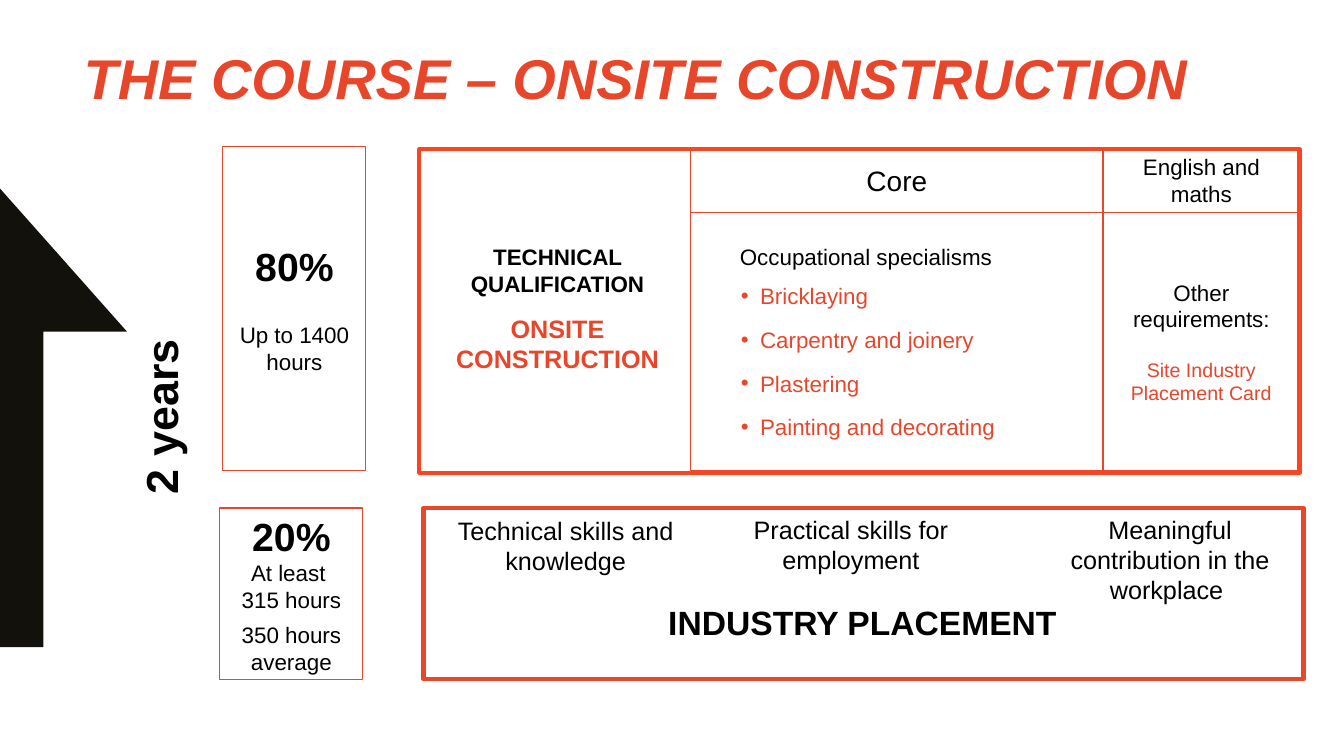
from dataclasses import dataclass

from lxml import etree
from pptx import Presentation
from pptx.dml.color import RGBColor
from pptx.enum.shapes import MSO_SHAPE
from pptx.enum.text import MSO_ANCHOR, MSO_AUTO_SIZE, PP_ALIGN
from pptx.oxml.ns import qn
from pptx.util import Pt

PX = 9144  # EMU per px, 100 px to the inch
FONT = "Arial"
RECT = MSO_SHAPE.RECTANGLE
TOP, MIDDLE = MSO_ANCHOR.TOP, MSO_ANCHOR.MIDDLE
LEFT, CENTER = PP_ALIGN.LEFT, PP_ALIGN.CENTER
NO_AUTOFIT = MSO_AUTO_SIZE.NONE
COLORS = {
    "black": "000000",
    "arrow": "12110C",
    "white": "FFFFFF",
    "accent": "E8462B",
    "line": "E8472B",
    "frame": "FC4421",
}


@dataclass
class Para:
    text: str
    size: int = 16
    color: str = "black"
    bold: bool = False
    italic: bool = False
    align: PP_ALIGN = CENTER
    before: int = 0
    after: int = 0
    margin: int = 0
    indent: int = 0
    bullet: str = ""


@dataclass
class Box:
    left: int
    top: int
    width: int
    height: int
    paras: tuple = ()
    line: str = ""
    line_width: float = 0.75
    fill: str = ""
    anchor: MSO_ANCHOR = MIDDLE
    rotation: int = 0


def rgb(name: str) -> RGBColor:
    return RGBColor.from_string(COLORS[name])


def write_paras(tf, paras: tuple, anchor: MSO_ANCHOR) -> None:
    tf.word_wrap = True
    tf.auto_size = NO_AUTOFIT
    tf.vertical_anchor = anchor
    for i, para in enumerate(paras):
        p = tf.add_paragraph() if i else tf.paragraphs[0]
        p.text = para.text
        p.alignment = para.align
        p.space_before = Pt(para.before)
        p.space_after = Pt(para.after)
        pPr = p._p.get_or_add_pPr()
        if para.margin:
            pPr.set("marL", str(para.margin * PX))
            pPr.set("indent", str(para.indent * PX))
        if para.bullet:
            p.level = 1
            etree.SubElement(pPr, qn("a:buFont"), typeface=FONT)
            etree.SubElement(pPr, qn("a:buChar"), char=para.bullet)
        for r in p.runs:
            r.font.name = FONT
            r.font.size = Pt(para.size)
            r.font.bold = para.bold
            r.font.italic = para.italic
            r.font.color.rgb = rgb(para.color)


def add_box(shapes, box: Box) -> None:
    """Draw a rectangle, or a text box when it has neither line nor fill."""
    place = [v * PX for v in (box.left, box.top, box.width, box.height)]
    if box.line or box.fill:
        sp = shapes.add_shape(RECT, *place)
        sp.shadow.inherit = False
        if box.fill:
            sp.fill.solid()
            sp.fill.fore_color.rgb = rgb(box.fill)
        else:
            sp.fill.background()
        if box.line:
            sp.line.color.rgb = rgb(box.line)
            sp.line.width = Pt(box.line_width)
        else:
            sp.line.fill.background()
    else:
        sp = shapes.add_textbox(*place)
    sp.rotation = box.rotation
    if box.paras:
        write_paras(sp.text_frame, box.paras, box.anchor)


def add_years_arrow(shapes) -> None:
    fb = shapes.build_freeform(0, 187, scale=PX)
    fb.add_line_segments([(126, 329), (43, 329), (43, 642), (0, 642)])
    sp = fb.convert_to_shape()
    sp.shadow.inherit = False
    sp.fill.solid()
    sp.fill.fore_color.rgb = rgb("arrow")
    sp.line.fill.background()


def specialism(text: str) -> Para:
    return Para(text, color="accent", align=LEFT, before=6, after=6,
                margin=59, indent=-19, bullet="•")


def skill(left: int, top: int, width: int, height: int, text: str) -> Box:
    return Box(left, top, width, height, (Para(text, 18),), anchor=TOP)


SPECIALISMS = ("Bricklaying", "Carpentry and joinery", "Plastering",
               "Painting and decorating")

TITLE = Box(73, 38, 1181, 142, (
    Para("THE COURSE – ONSITE CONSTRUCTION", 40, "accent", True, True, LEFT),
), anchor=TOP)

COURSE = (
    Box(221, 145, 142, 322, (
        Para("80%", 28, bold=True),
        Para("Up to 1400 hours", before=23),
    ), "line"),
    Box(218, 504, 142, 170, (
        Para("20%", 28, bold=True),
        Para("At least "),
        Para("315 hours", after=6),
        Para("350 hours average"),
    ), "line"),
    Box(420, 145, 266, 322, (
        Para("TECHNICAL QUALIFICATION", bold=True, after=6),
        Para("ONSITE CONSTRUCTION", 18, "accent", True, before=6, after=6),
    )),
    Box(685, 146, 409, 65, (Para("Core", 20),), "line"),
    Box(685, 211, 409, 256, (
        Para("Occupational specialisms", align=LEFT, after=3,
             margin=30, indent=9),
        *map(specialism, SPECIALISMS),
    ), "line"),
    Box(1094, 146, 195, 65, (Para("English and maths"),), "line"),
    Box(1094, 211, 195, 256, (
        Para("Other requirements:"),
        Para("Site Industry Placement Card", 14, "accent", before=18),
    ), "line"),
    Box(-98, 390, 514, 47, (Para("2 years", 32, bold=True),), rotation=270),
    Box(416, 148, 873, 321, line="frame", line_width=3),
)

PLACEMENT = (
    skill(425, 506, 272, 83, "Technical skills and knowledge"),
    skill(706, 505, 276, 81, "Practical skills for employment"),
    Box(431, 600, 858, 35, (Para("INDUSTRY PLACEMENT ", 24, bold=True),),
        fill="white"),
    Box(420, 504, 873, 170, line="line", line_width=3),
    skill(1032, 505, 257, 117, "Meaningful contribution in the workplace "),
)


def main() -> None:
    prs = Presentation()
    prs.slide_width, prs.slide_height = 1333 * PX, 750 * PX
    slide = prs.slides.add_slide(prs.slide_layouts[5])

    title = slide.shapes.title
    title.left, title.top = TITLE.left * PX, TITLE.top * PX
    title.width, title.height = TITLE.width * PX, TITLE.height * PX
    write_paras(title.text_frame, TITLE.paras, TITLE.anchor)

    add_years_arrow(slide.shapes)
    for box in COURSE:
        add_box(slide.shapes, box)
    placement = slide.shapes.add_group_shape()
    for box in PLACEMENT:
        add_box(placement.shapes, box)
    prs.save("out.pptx")


if __name__ == "__main__":
    main()
